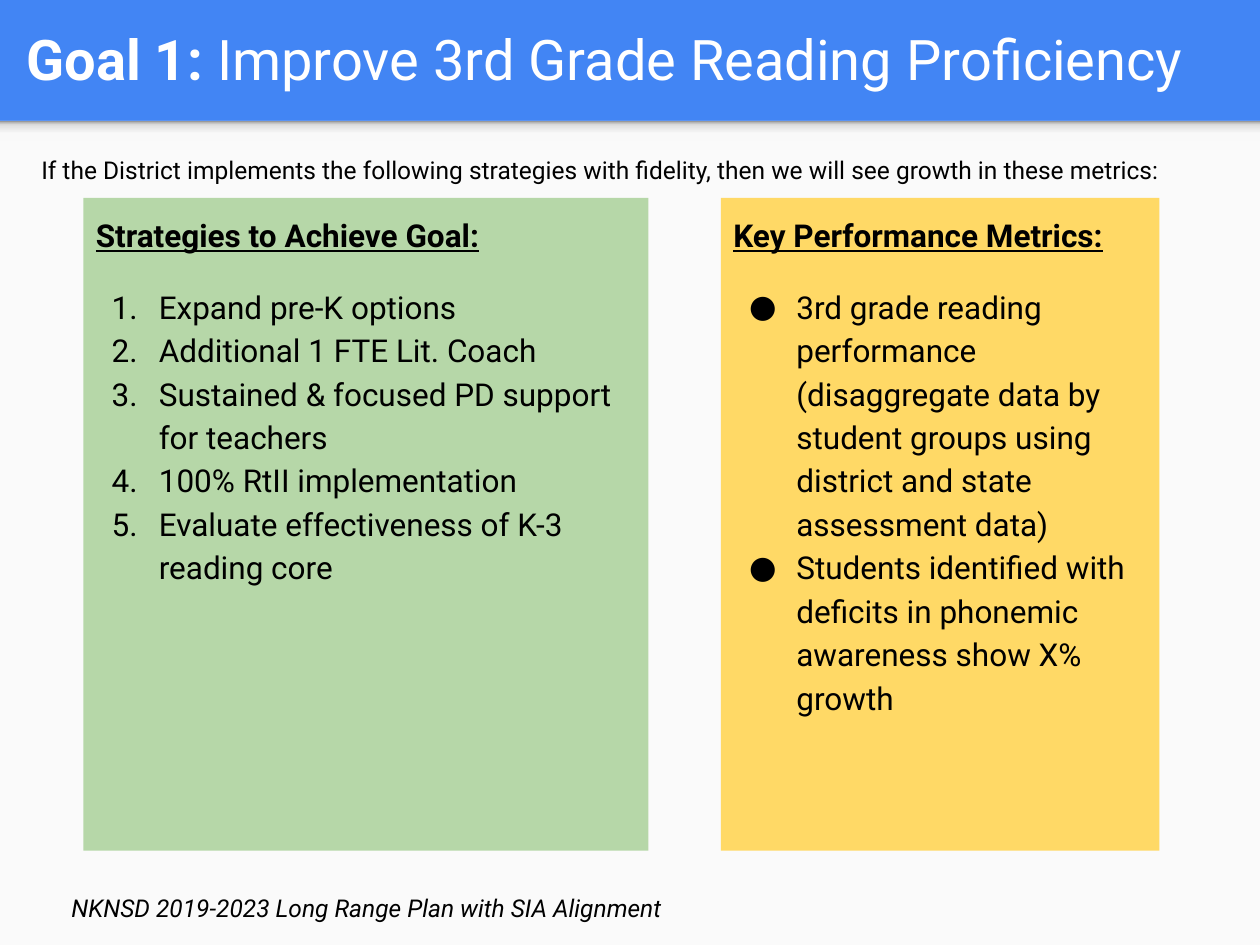
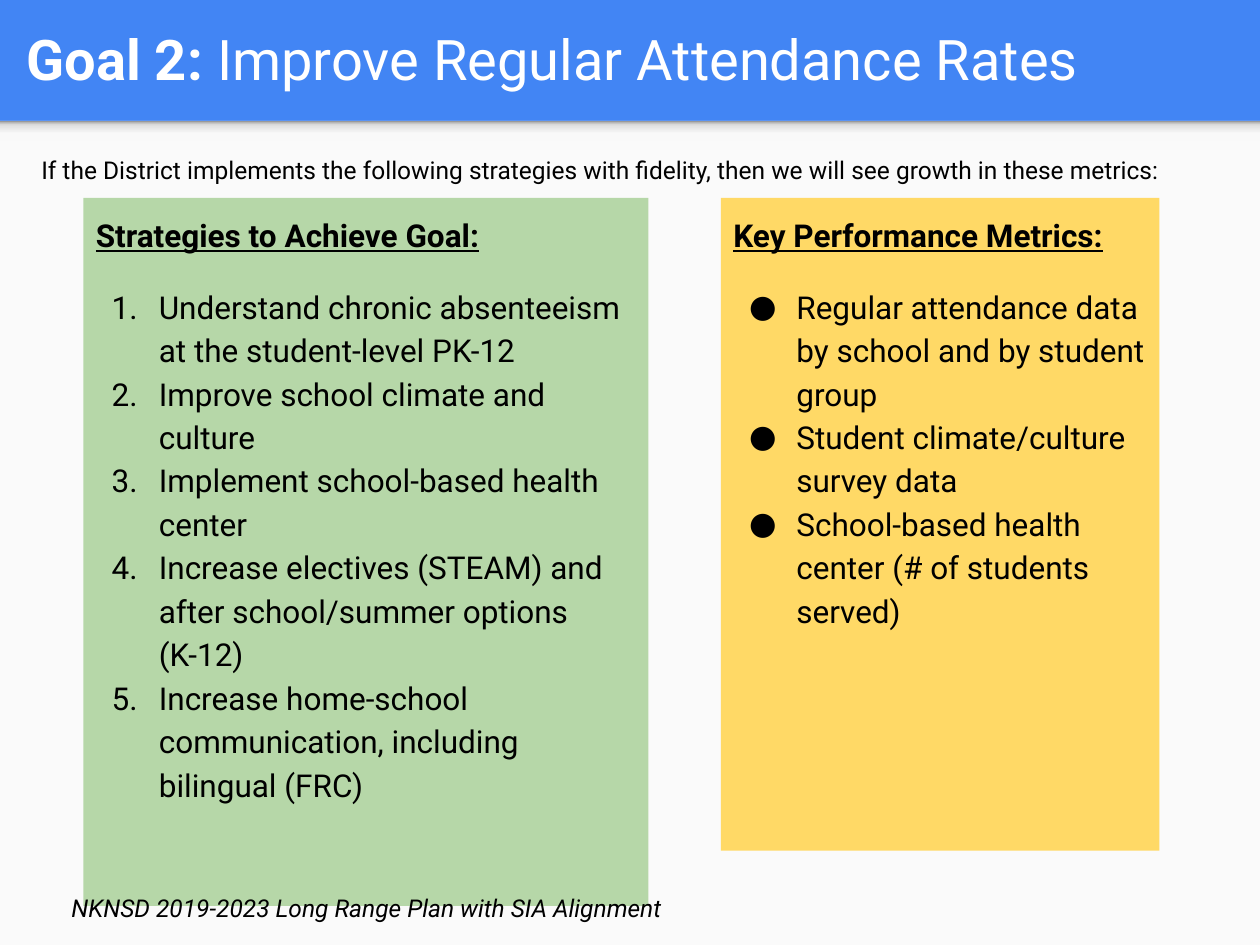
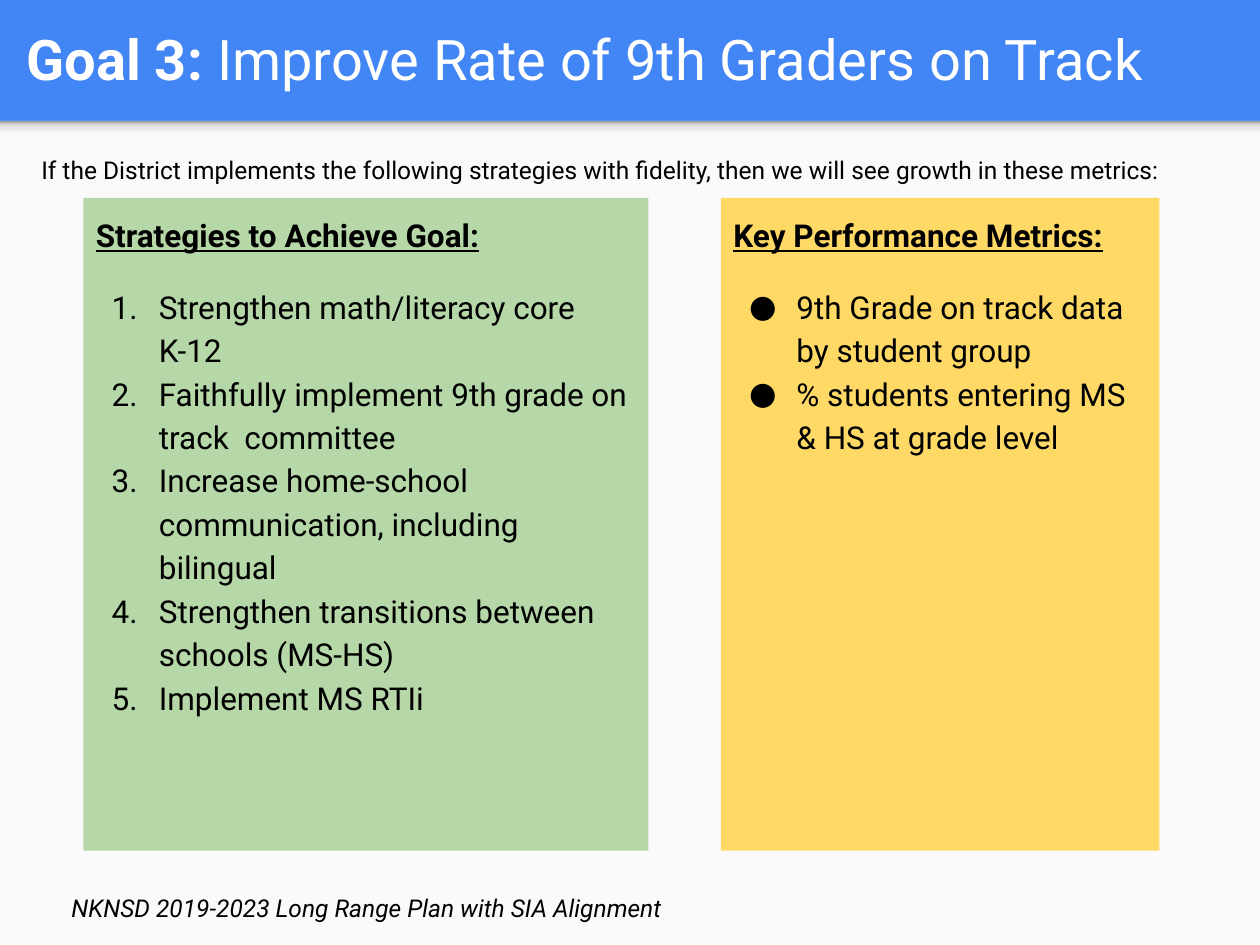
import pptx
import pptx.dml.color
import pptx.enum.shapes
import pptx.enum.text
import pptx.oxml.ns
import pptx.util
from lxml import etree

Pt = pptx.util.Pt
qn = pptx.oxml.ns.qn

COLOURS = {
    "header": "4285F4",
    "body": "FAFAFA",
    "strategies": "B6D7A8",
    "metrics": "FFD966",
    "text": "000000",
    "title": "FFFFFF",
}
SHADE_STOPS = [(0, "F9F9F9"), (36, "F9F9F9"), (80, "DEDEDE"), (100, "999999")]
FONT = "Roboto"
WIDTH, HEIGHT, HEADER_HEIGHT = 720, 540, 69.1
PANEL_TOP, PANEL_HEIGHT = 113.1, 373
INTRO = ("If the District implements the following strategies with fidelity, "
         "then we will see growth in these metrics:")
FOOTER = "NKNSD 2019-2023 Long Range Plan with SIA Alignment"

# Each goal: title, strategies, metrics, height of the strategies panel
GOALS = [
    ("Improve 3rd Grade Reading Proficiency",
     ["Expand pre-K options",
      "Additional 1 FTE Lit. Coach",
      "Sustained & focused PD support for teachers",
      "100% RtII implementation",
      "Evaluate effectiveness of K-3 reading core"],
     ["3rd grade reading performance (disaggregate data by student groups "
      "using district and state assessment data)",
      "Students identified with deficits in phonemic awareness show X% growth"],
     PANEL_HEIGHT),
    ("Improve Regular Attendance Rates",
     ["Understand chronic absenteeism at the student-level PK-12",
      "Improve school climate and culture",
      "Implement school-based health center",
      "Increase electives (STEAM) and after school/summer options (K-12)",
      "Increase home-school communication, including bilingual (FRC)"],
     ["Regular attendance data by school and by student group",
      "Student climate/culture survey data",
      "School-based health center (# of students served)"],
     404.6),
    ("Improve Rate of 9th Graders on Track",
     ["Strengthen math/literacy core K-12",
      "Faithfully implement 9th grade on track  committee",
      "Increase home-school communication, including bilingual",
      "Strengthen transitions between schools (MS-HS)",
      "Implement MS RTIi"],
     ["9th Grade on track data by student group",
      "% students entering MS & HS at grade level"],
     PANEL_HEIGHT),
]


def rgb(name):
    return pptx.dml.color.RGBColor.from_string(COLOURS[name])


class GoalDeck:
    def __init__(self):
        self.deck = pptx.Presentation()
        self.deck.slide_width = Pt(WIDTH)
        self.deck.slide_height = Pt(HEIGHT)
        self.page = None

    def add_page(self):
        self.page = self.deck.slides.add_slide(self.deck.slide_layouts[6])
        background = self.page.background.fill
        background.solid()
        background.fore_color.rgb = rgb("header")
        self.rectangle(0, HEADER_HEIGHT, WIDTH, HEIGHT - HEADER_HEIGHT, "body")
        self.header_shade()

    def rectangle(self, left, top, width, height, colour):
        box = self.page.shapes.add_shape(
            pptx.enum.shapes.MSO_SHAPE.RECTANGLE,
            Pt(left), Pt(top), Pt(width), Pt(height))
        box.shadow.inherit = False
        box.line.fill.background()
        box.fill.solid()
        box.fill.fore_color.rgb = rgb(colour)
        return box

    def header_shade(self):
        band = self.rectangle(0, HEADER_HEIGHT, WIDTH, 11.5, "body")
        band.fill.gradient()
        band.fill.gradient_angle = 90
        stops = next(band._element.spPr.iter(qn("a:gsLst")))
        for stop in list(stops):
            stops.remove(stop)
        for percent, colour in SHADE_STOPS:
            stop = etree.SubElement(stops, qn("a:gs"), pos=str(percent * 1000))
            etree.SubElement(stop, qn("a:srgbClr"), val=colour)

    def frame(self, box, anchor="TOP"):
        frame = box.text_frame
        frame.word_wrap = True
        frame.vertical_anchor = pptx.enum.text.MSO_ANCHOR[anchor]
        frame.margin_left = frame.margin_right = Pt(7.2)
        frame.margin_top = frame.margin_bottom = Pt(7.2)
        para = frame.paragraphs[0]
        para.alignment = pptx.enum.text.PP_ALIGN.LEFT
        return frame

    def span(self, para, text, size, colour="text", bold=False, italic=False,
             underline=False):
        span = para.add_run()
        span.text = text
        font = span.font
        font.name, font.size = FONT, Pt(size)
        font.bold, font.italic, font.underline = bold, italic, underline
        font.color.rgb = rgb(colour)

    def text(self, left, top, width, height, spans, size, anchor="TOP", **style):
        box = self.page.shapes.add_textbox(Pt(left), Pt(top), Pt(width), Pt(height))
        para = self.frame(box, anchor).paragraphs[0]
        for words, bold in spans:
            self.span(para, words, size, bold=bold, **style)

    def bullet(self, para, numbered):
        properties = para._p.get_or_add_pPr()
        properties.set("marL", str(Pt(36)))
        properties.set("indent", str(Pt(-27)))
        colour = etree.SubElement(properties, qn("a:buClr"))
        etree.SubElement(colour, qn("a:srgbClr"), val=COLOURS["text"])
        etree.SubElement(properties, qn("a:buFont"), typeface=FONT)
        if numbered:
            etree.SubElement(properties, qn("a:buAutoNum"), type="arabicPeriod")
        else:
            etree.SubElement(properties, qn("a:buChar"), char="●")

    def panel(self, left, width, height, colour, heading, items, numbered=False):
        box = self.rectangle(left, PANEL_TOP, width, height, colour)
        frame = self.frame(box)
        para = frame.paragraphs[0]
        para.line_spacing = 1.15
        self.span(para, heading, 18, bold=True, underline=True)
        for index, item in enumerate(items):
            para = frame.add_paragraph()
            para.alignment = pptx.enum.text.PP_ALIGN.LEFT
            para.line_spacing = 1.15
            para.space_before = Pt(0 if index else 16)
            self.bullet(para, numbered)
            self.span(para, item, 18)


def main():
    goals = GoalDeck()
    for number, (title, strategies, metrics, height) in enumerate(GOALS, 1):
        goals.add_page()
        # Title
        goals.text(8, 1.5, 695, 63.5, [(f"Goal {number}: ", True), (title, False)],
                   32, anchor="MIDDLE", colour="title")
        # Strategies and metrics
        goals.panel(47.7, 322.8, height, "strategies",
                    "Strategies to Achieve Goal:", strategies, numbered=True)
        goals.panel(412, 250.6, PANEL_HEIGHT, "metrics",
                    "Key Performance Metrics:", metrics)
        # Introduction and footer
        goals.text(16.5, 81.5, 674.5, 31.5, [(INTRO, False)], 14)
        goals.text(33.8, 503.3, 639.5, 25, [(FOOTER, False)], 14, italic=True)
    goals.deck.save("out.pptx")


if __name__ == "__main__":
    main()
